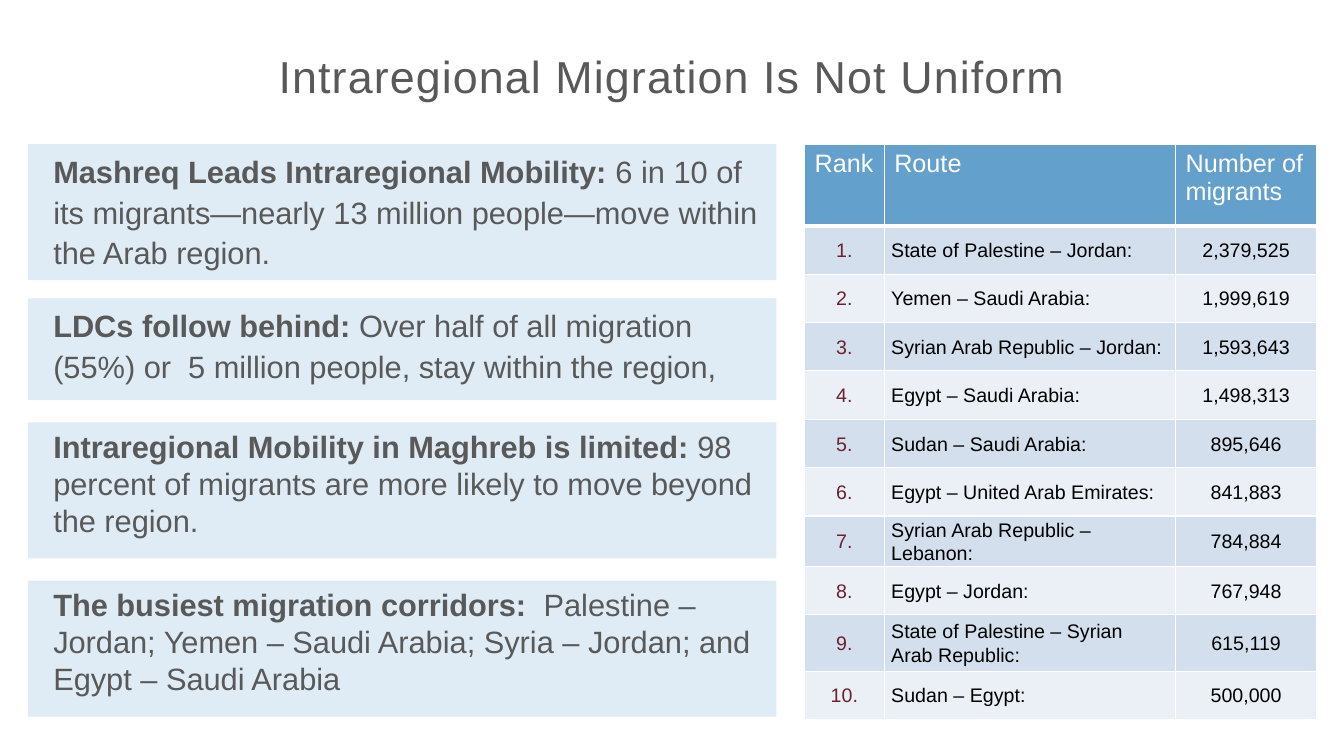
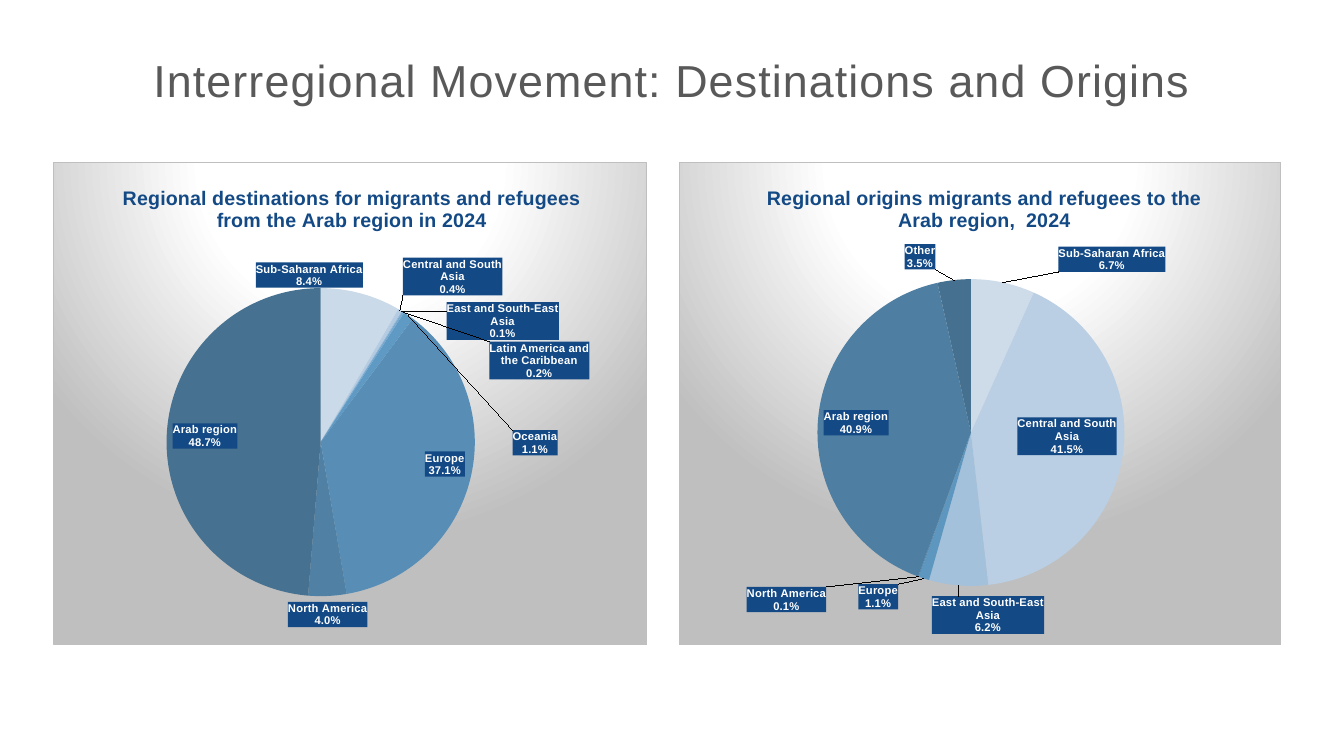
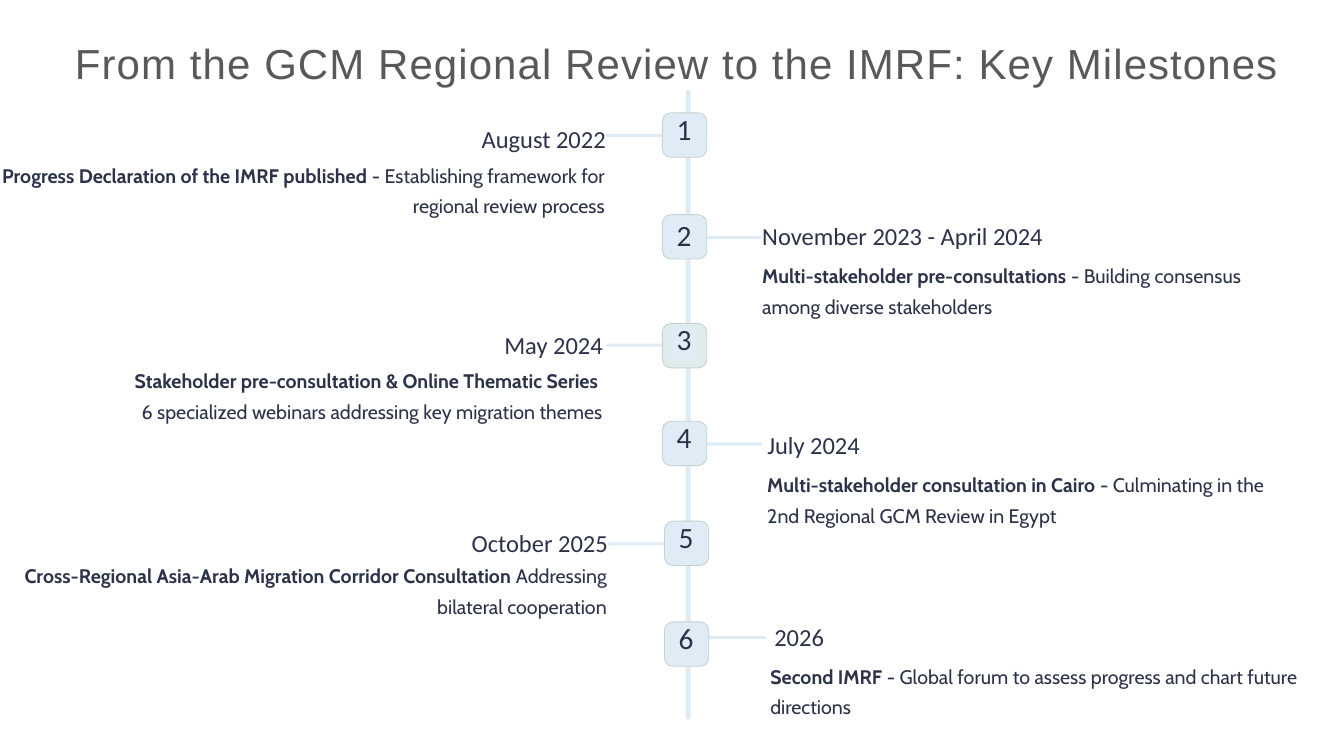
import pptx
import pptx.util
import pptx.dml.color
import pptx.enum.shapes
import pptx.enum.text
import pptx.chart.data
import pptx.enum.chart
import pptx.oxml

Inches = pptx.util.Inches
Pt = pptx.util.Pt
RGB = pptx.dml.color.RGBColor.from_string
SHAPE = pptx.enum.shapes.MSO_SHAPE
ANCHOR = pptx.enum.text.MSO_ANCHOR
ALIGN = {"l": pptx.enum.text.PP_ALIGN.LEFT, "c": pptx.enum.text.PP_ALIGN.CENTER,
         "r": pptx.enum.text.PP_ALIGN.RIGHT}
COLORS = {"grey": "595959", "pale": "E0ECF5", "header": "63A0CC", "band": "D3DFEC",
          "light": "EAF0F6", "white": "FFFFFF", "black": "000000", "rank": "6B212F",
          "navy": "134985", "silver": "BFBFBF", "ink": "2C3249", "badge": "DFECE9",
          "edge": "C5D2CF"}
NS = ('xmlns:a="http://schemas.openxmlformats.org/drawingml/2006/main" '
      'xmlns:c="http://schemas.openxmlformats.org/drawingml/2006/chart"')


def write(frame, text, lead="", size=14, font="Arial", color="grey", align="l",
          spacing=1.0, before=0, after=0, indent=0, tracking=0):
    for number, line in enumerate(text.split("\n")):
        paragraph = frame.add_paragraph() if number else frame.paragraphs[0]
        paragraph.alignment = ALIGN[align]
        paragraph.line_spacing = spacing
        paragraph.space_before, paragraph.space_after = Pt(before), Pt(after)
        if indent:
            properties = paragraph._p.get_or_add_pPr()
            properties.set("marL", str(Inches(indent)))
            properties.set("indent", "0")
        for part, bold in ((lead if number == 0 else "", True), (line, False)):
            if part:
                run = paragraph.add_run()
                run.text = part
                run.font.size, run.font.name, run.font.bold = Pt(size), font, bold
                run.font.color.rgb = RGB(COLORS[color])
                if tracking:
                    run._r.get_or_add_rPr().set("spc", str(tracking))


def box(slide, left, top, width, height, fill=None, line=None, kind=SHAPE.RECTANGLE,
        rounding=None, anchor=ANCHOR.TOP, inset=None):
    place = [Inches(value) for value in (left, top, width, height)]
    if fill:
        shape = slide.shapes.add_shape(kind, *place)
        shape.shadow.inherit = False
        shape.fill.solid()
        shape.fill.fore_color.rgb = RGB(COLORS[fill])
        if line:
            shape.line.color.rgb = RGB(COLORS[line])
            shape.line.width = Pt(0.6)
        else:
            shape.line.fill.background()
    else:
        shape = slide.shapes.add_textbox(*place)
    if rounding is not None:
        shape.adjustments[0] = rounding
    frame = shape.text_frame
    frame.word_wrap = True
    frame.vertical_anchor = anchor
    if inset is not None:
        frame.margin_left = frame.margin_right = Inches(inset)
        frame.margin_top = frame.margin_bottom = Inches(inset)
    return frame


deck = pptx.Presentation()
deck.slide_width, deck.slide_height = Inches(13.33), Inches(7.5)

titles = [
    ("Intraregional Migration Is Not Uniform", 0.62, 0.47, 12.09, 32),
    ("Interregional Movement: Destinations and Origins", 0.62, 0.51, 12.09, 32),
    ("From the GCM Regional Review to the IMRF: Key Milestones", 0.18, 0.35, 13.08, 30),
]
slides = []
for title, left, top, width, size in titles:
    slide = deck.slides.add_slide(deck.slide_layouts[6])
    frame = box(slide, left, top, width, 0.5, anchor=ANCHOR.MIDDLE)
    write(frame, title, size=size, align="c", spacing=1.1, tracking=80)
    slides.append(slide)
ranking, movement, timeline = slides

findings = [
    (1.43, 1.35, 1.1, 6, 8, "Mashreq Leads Intraregional Mobility:",
     " 6 in 10 of its migrants—nearly 13 million people—move within the Arab region."),
    (2.96, 1.01, 1.1, 0, 8, "LDCs follow behind:",
     " Over half of all migration (55%) or  5 million people, stay within the region,"),
    (4.19, 1.35, 1.0, 12, 0, "Intraregional Mobility in Maghreb is limited:",
     " 98 percent of migrants are more likely to move beyond the region."),
    (5.76, 1.35, 1.0, 12, 0, "The busiest migration corridors:  ",
     "Palestine – Jordan; Yemen – Saudi Arabia; Syria – Jordan; and Egypt – Saudi Arabia"),
]
for top, height, spacing, before, after, lead, text in findings:
    write(box(ranking, 0.28, top, 7.42, height, fill="pale"), text, lead=lead, size=22,
          spacing=spacing, before=before, after=after, indent=0.15)

routes = [
    ("State of Palestine – Jordan:", "2,379,525"),
    ("Yemen – Saudi Arabia:", "1,999,619"),
    ("Syrian Arab Republic – Jordan:", "1,593,643"),
    ("Egypt – Saudi Arabia:", "1,498,313"),
    ("Sudan – Saudi Arabia:", "895,646"),
    ("Egypt – United Arab Emirates:", "841,883"),
    ("Syrian Arab Republic – Lebanon:", "784,884"),
    ("Egypt – Jordan:", "767,948"),
    ("State of Palestine – Syrian Arab Republic:", "615,119"),
    ("Sudan – Egypt:", "500,000"),
]
rows = [("Rank", "Route", "Number of migrants")]
rows += [(f"{rank}.", *route) for rank, route in enumerate(routes, 1)]
corridors = ranking.shapes.add_table(len(rows), 3, Inches(7.98), Inches(1.43),
                                     Inches(5.08), Inches(5.68)).table
for column, width in zip(corridors.columns, (0.79, 2.89, 1.4)):
    column.width = Inches(width)
for r, row in enumerate(rows):
    corridors.rows[r].height = Inches({0: 0.81, 9: 0.56}.get(r, 0.48))
    for c, text in enumerate(row):
        cell = corridors.cell(r, c)
        cell.fill.solid()
        cell.fill.fore_color.rgb = RGB(COLORS["header" if r == 0 else "band" if r % 2 else "light"])
        if r == 0:
            write(cell.text_frame, text, size=18, color="white")
        else:
            cell.vertical_anchor = ANCHOR.MIDDLE
            cell.margin_left = cell.margin_right = Inches(0.07)
            cell.margin_top = cell.margin_bottom = 0
            write(cell.text_frame, text, color="black" if c else "rank",
                  align="l" if c == 1 else "c", spacing=1.07)
        for position, side in enumerate("LRTB"):
            heavy = (r, side) in ((0, "B"), (1, "T"))
            border = pptx.oxml.parse_xml(
                f'<a:ln{side} {NS} w="{Pt(3 if heavy else 1)}"><a:solidFill>'
                f'<a:srgbClr val="{COLORS["white"]}"/></a:solidFill></a:ln{side}>')
            cell._tc.get_or_add_tcPr().insert(position, border)

regions = ["Sub-Saharan Africa", "Central and South Asia", "East and South-East Asia",
           "Latin America and the Caribbean", "Oceania", "Europe", "North America",
           "Arab region"]
pies = [
    {"title": "Regional destinations for migrants and refugees from the Arab region in 2024",
     "left": 0.53, "width": 5.89, "title_x": 0.11, "plot": (0.19, 0.26, 0.52, 0.64),
     "regions": regions, "values": (8.4, 0.4, 0.1, 0.2, 1.1, 37.1, 4, 48.7),
     "slices": "CBDAE9 B4CBE1 9BBCD9 78A9D0 5F9AC5 588EB5 5081A5 467190",
     "inside": (5, 7),
     "shifts": {0: (-0.18, 0), 1: (0, -0.02), 2: (0.07, 0.07), 3: (0.14, 0.15),
                4: (0.17, 0.3)}},
    {"title": "Regional origins migrants and refugees to the Arab region,  2024",
     "left": 6.73, "width": 5.98, "title_x": 0.14, "plot": (0.23, 0.24, 0.51, 0.64),
     "regions": regions + ["Other"], "values": (6.7, 41.5, 6.2, 0, 0, 1.1, 0.1, 40.9, 3.5),
     "slices": "CEDCEA BACFE3 A4C1DC 89B1D4 63A0CC 5D96BF 568BB1 4E7EA1 45708F",
     "inside": (1, 7),
     "shifts": {0: (0.09, -0.01), 2: (0.05, 0.01), 5: (-0.04, 0), 6: (-0.15, 0.01),
                8: (-0.03, -0.01)}},
]
label_look = (
    '<c:numFmt formatCode="0.0%" sourceLinked="0"/>'
    f'<c:spPr><a:solidFill><a:srgbClr val="{COLORS["navy"]}"/></a:solidFill></c:spPr>'
    '<c:txPr><a:bodyPr/><a:p><a:pPr><a:defRPr sz="800" b="1"><a:solidFill>'
    f'<a:srgbClr val="{COLORS["white"]}"/></a:solidFill><a:latin typeface="Arial"/>'
    '</a:defRPr></a:pPr><a:endParaRPr lang="en-US"/></a:p></c:txPr>')
label_parts = (
    '<c:showLegendKey val="0"/><c:showVal val="0"/><c:showCatName val="1"/>'
    '<c:showSerName val="0"/><c:showPercent val="1"/><c:showBubbleSize val="0"/>'
    '<c:separator>\n</c:separator>')
backdrop = (
    f'<c:spPr {NS}><a:gradFill><a:gsLst><a:gs pos="0"><a:srgbClr val="{COLORS["white"]}"/></a:gs>'
    f'<a:gs pos="39000"><a:srgbClr val="{COLORS["white"]}"/></a:gs>'
    f'<a:gs pos="100000"><a:srgbClr val="{COLORS["silver"]}"/></a:gs></a:gsLst>'
    '<a:path path="circle"><a:fillToRect l="50000" t="-80000" r="50000" b="180000"/></a:path>'
    f'</a:gradFill><a:ln w="{Pt(0.75)}"><a:solidFill><a:srgbClr val="{COLORS["silver"]}"/>'
    '</a:solidFill></a:ln></c:spPr>')
for pie in pies:
    data = pptx.chart.data.CategoryChartData()
    data.categories = pie["regions"]
    data.add_series("Series 1", pie["values"])
    chart = movement.shapes.add_chart(
        pptx.enum.chart.XL_CHART_TYPE.PIE, Inches(pie["left"]), Inches(1.61),
        Inches(pie["width"]), Inches(4.79), data).chart
    chart.has_legend = False
    chart.font.size, chart.font.name = Pt(10), "Arial"
    chart.font.color.rgb = RGB(COLORS["black"])
    chart.has_title = True
    heading = chart.chart_title
    heading.include_in_layout = False
    write(heading.text_frame, "", lead=pie["title"], color="navy", align="c")
    chart.plots[0].vary_by_categories = True
    series = chart.plots[0].series[0]
    for index, color in enumerate(pie["slices"].split()):
        fill = series.points[index].format.fill
        fill.solid()
        fill.fore_color.rgb = RGB(color)

    labels = ""
    for index, value in enumerate(pie["values"]):
        labels += f'<c:dLbl><c:idx val="{index}"/>'
        if value:
            if index in pie["shifts"]:
                x, y = pie["shifts"][index]
                labels += (f'<c:layout><c:manualLayout><c:x val="{x}"/><c:y val="{y}"/>'
                           '</c:manualLayout></c:layout>')
            position = "inEnd" if index in pie["inside"] else "outEnd"
            labels += f'{label_look}<c:dLblPos val="{position}"/>{label_parts}</c:dLbl>'
        else:
            labels += '<c:delete val="1"/></c:dLbl>'
    series._element.find("{*}cat").addprevious(pptx.oxml.parse_xml(
        f'<c:dLbls {NS}>{labels}{label_look}<c:dLblPos val="outEnd"/>{label_parts}'
        '<c:showLeaderLines val="1"/></c:dLbls>'))

    x, y, w, h = pie["plot"]
    plot_layout = (
        f'<c:layout {NS}><c:manualLayout><c:layoutTarget val="inner"/><c:xMode val="edge"/>'
        f'<c:yMode val="edge"/><c:x val="{x}"/><c:y val="{y}"/><c:w val="{w}"/>'
        f'<c:h val="{h}"/></c:manualLayout></c:layout>')
    title_layout = (
        f'<c:layout {NS}><c:manualLayout><c:xMode val="edge"/><c:yMode val="edge"/>'
        f'<c:x val="{pie["title_x"]}"/><c:y val="0.04"/></c:manualLayout></c:layout>')
    chart_root = chart._chartSpace
    plot_area = chart_root.chart.plotArea
    for old in list(plot_area.findall("{*}layout")):
        plot_area.remove(old)
    plot_area.insert(0, pptx.oxml.parse_xml(plot_layout))
    for old in list(heading._element.findall("{*}layout")):
        heading._element.remove(old)
    heading._element.find("{*}tx").addnext(pptx.oxml.parse_xml(title_layout))
    chart_root.chart.addnext(pptx.oxml.parse_xml(backdrop))

box(timeline, 6.8, 0.89, 0.05, 6.25, fill="pale", kind=SHAPE.ROUNDED_RECTANGLE, rounding=0.5)
milestones = [
    (6.57, 1.12, 0.04, 6.01, 1.33, 6.01, 1.22, 6.0, 1.55, "August 2022",
     "Progress Declaration of the IMRF published",
     " - Establishing framework for regional review process"),
    (6.57, 2.13, 0.08, 6.98, 2.34, 7.56, 2.19, 7.56, 2.55, "November 2023 - April 2024",
     "Multi-stakeholder pre-consultations",
     " - Building consensus among diverse stakeholders"),
    (6.57, 3.21, 0.03, 6.01, 3.41, 5.98, 3.27, 5.98, 3.59, "May 2024",
     "Stakeholder pre-consultation & Online Thematic Series ",
     "\n6 specialized webinars addressing key migration themes"),
    (6.57, 4.18, 0.04, 6.98, 4.39, 7.61, 4.26, 7.61, 4.62, "July 2024",
     "Multi-stakeholder consultation in Cairo",
     " - Culminating in the 2nd Regional GCM Review in Egypt"),
    (6.59, 5.17, 0.04, 6.03, 5.38, 6.03, 5.23, 6.02, 5.52, "October 2025",
     "Cross-Regional Asia-Arab Migration Corridor Consultation",
     " Addressing bilateral cooperation"),
    (6.59, 6.17, 0.04, 7.02, 6.31, 7.68, 6.16, 7.64, 6.52, "2026",
     "Second IMRF", " - Global forum to assess progress and chart future directions"),
]
for number, milestone in enumerate(milestones, 1):
    (badge_left, badge_top, drop, branch_left, branch_top, date_edge, date_top,
     event_edge, event_top, date, lead, text) = milestone
    on_left = number % 2 == 1
    align = "r" if on_left else "l"
    event_width = 6.16 if on_left else 5.23
    box(timeline, branch_left, branch_top, 0.58, 0.03, fill="pale",
        kind=SHAPE.ROUNDED_RECTANGLE, rounding=0.5)
    box(timeline, badge_left, badge_top, 0.44, 0.44, fill="badge" if number == 3 else "pale",
        line="edge", kind=SHAPE.ROUNDED_RECTANGLE, rounding=0.19)
    write(box(timeline, badge_left + 0.07, badge_top + drop, 0.29, 0.34, fill="pale", inset=0),
          str(number), size=21, font="Calibri", color="ink", align="c", spacing=Pt(21))
    write(box(timeline, date_edge - 3.02 * on_left, date_top, 3.02, 0.3, inset=0),
          date, size=17.5, font="Calibri", color="ink", align=align, spacing=Pt(21.5))
    write(box(timeline, event_edge - event_width * on_left, event_top, event_width, 0.62, inset=0),
          text, lead=lead, font="Cabin", color="ink", align=align, spacing=Pt(22))

deck.save("out.pptx")
